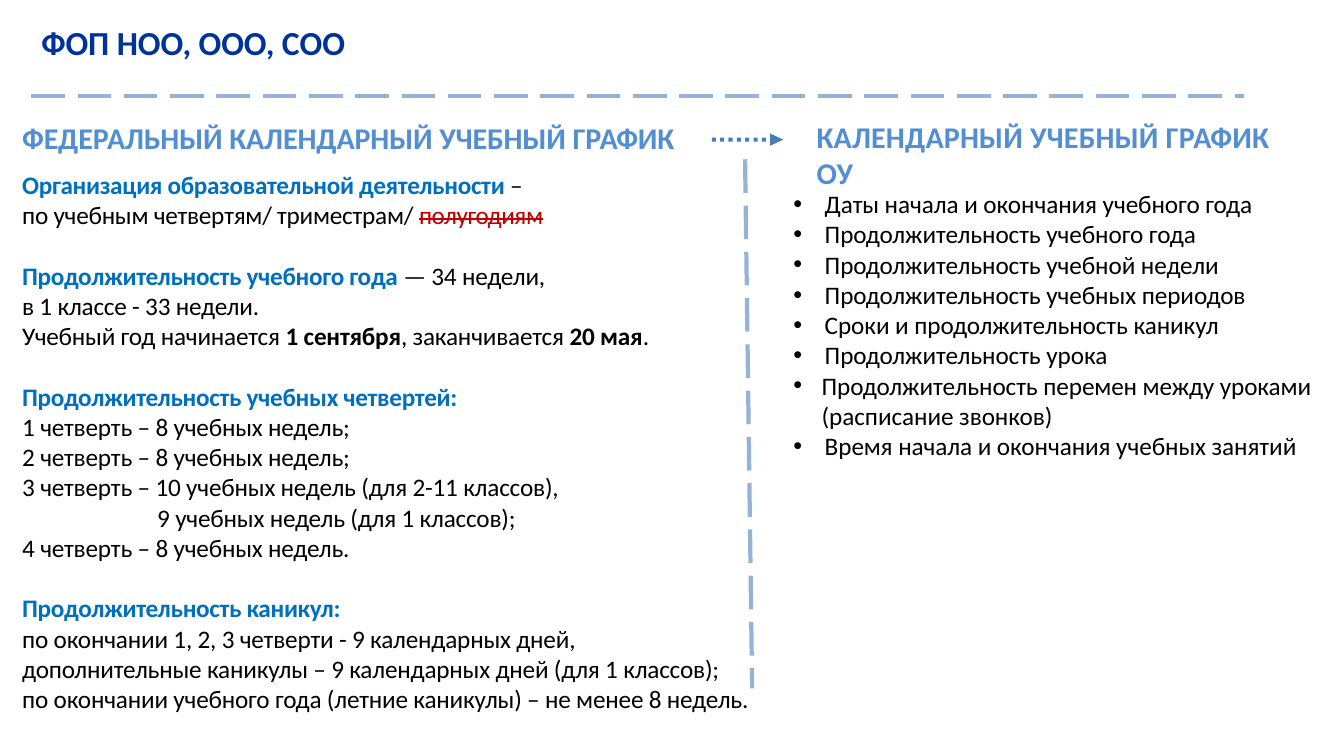
from dataclasses import dataclass

from lxml.etree import SubElement
from pptx import Presentation
from pptx.dml.color import RGBColor
from pptx.enum.dml import MSO_LINE
from pptx.enum.shapes import MSO_CONNECTOR
from pptx.enum.text import MSO_ANCHOR, MSO_AUTO_SIZE, PP_ALIGN
from pptx.oxml.ns import qn
from pptx.util import Inches, Pt

NAVY = RGBColor(0x00, 0x33, 0x99)
HEADING_BLUE = RGBColor(0x53, 0x8E, 0xD3)
TOPIC_BLUE = RGBColor(0x00, 0x6F, 0xC0)
RULE_BLUE = RGBColor(0x94, 0xB3, 0xD6)
ARROW_BLUE = RGBColor(0x49, 0x7D, 0xBA)
RED = RGBColor(0xC0, 0x00, 0x00)
BLACK = RGBColor(0x00, 0x00, 0x00)
FONT = "Calibri"


@dataclass(frozen=True)
class Span:
    text: str
    color: RGBColor = BLACK
    bold: bool = False
    strike: bool = False
    tighten: float = 0


@dataclass(frozen=True)
class Para:
    spans: tuple[Span, ...]
    margin: float = 0.02
    indent: float = 0
    bullet: str = ""
    number: int = 0


@dataclass(frozen=True)
class Block:
    left: float
    top: float
    width: float
    height: float
    paras: tuple[Para, ...]
    size: float = 18
    spacing: float = -0.13


def plain(text: str) -> Para:
    return Para((Span(text),))


def topic(text: str, rest: str = "") -> Para:
    spans = (Span(text, TOPIC_BLUE, True, tighten=0.1),)
    return Para(spans + (Span(rest),) if rest else spans)


def heading(text: str, color: RGBColor = HEADING_BLUE) -> tuple[Para, ...]:
    return (Para((Span(text, color, True),), 0.01),)


def quarter(number: int, text: str) -> Para:
    return Para((Span(text),), 0.2, -0.18, number=number)


def bullet(text: str, margin: float = 0.32, indent: float = -0.31) -> Para:
    return Para((Span(text),), margin, indent, bullet="•")


TITLE = Block(0.4, 0.19, 3.2, 0.43, heading("ФОП НОО, ООО, СОО", NAVY), 24, -0.07)

BLOCKS = (
    Block(0.21, 1.15, 6.55, 0.39,
          heading("ФЕДЕРАЛЬНЫЙ КАЛЕНДАРНЫЙ УЧЕБНЫЙ ГРАФИК"), 21.5, -0.09),
    Block(8.09, 1.14, 4.8, 0.39,
          heading("КАЛЕНДАРНЫЙ УЧЕБНЫЙ ГРАФИК ОУ"), 21.5, 0.13),
    Block(7.86, 1.84, 5.24, 2.73, (
        bullet("Даты начала и окончания учебного года"),
        bullet("Продолжительность учебного года"),
        bullet("Продолжительность учебной недели"),
        bullet("Продолжительность учебных периодов"),
        bullet("Сроки и продолжительность каникул"),
        bullet("Продолжительность урока"),
        bullet("Продолжительность перемен между уроками (расписание звонков)",
               0.29, -0.28),
        bullet("Время начала и окончания учебных занятий"),
    ), spacing=-0.07),
    Block(0.2, 1.65, 5.4, 0.63, (
        topic("Организация образовательной деятельности ", "–"),
        Para((Span("по учебным четвертям/ триместрам/ ", tighten=0.05),
              Span("полугодиям", RED, strike=True, tighten=0.17))),
    )),
    Block(0.2, 2.55, 6.4, 0.93, (
        topic("Продолжительность учебного года ", "— 34 недели,"),
        plain("в 1 классе - 33 недели."),
        Para((Span("Учебный год начинается "), Span("1 сентября", bold=True),
              Span(", заканчивается "), Span("20 мая", bold=True), Span("."))),
    )),
    Block(0.2, 3.75, 5.5, 1.83, (
        topic("Продолжительность учебных четвертей:"),
        quarter(1, "четверть – 8 учебных недель;"),
        quarter(2, "четверть – 8 учебных недель;"),
        quarter(3, "четверть – 10 учебных недель (для 2-11 классов),"),
        Para((Span("9 учебных недель (для 1 классов);"),), 1.36),
        quarter(4, "четверть – 8 учебных недель."),
    )),
    Block(0.2, 5.85, 7.28, 1.23, (
        topic("Продолжительность каникул:"),
        plain("по окончании 1, 2, 3 четверти - 9 календарных дней,"),
        plain("дополнительные каникулы – 9 календарных дней (для 1 классов);"),
        plain("по окончании учебного года (летние каникулы) – не менее 8 недель."),
    )),
)


def format_para(p, para: Para) -> None:
    """Set alignment, indents and the bullet or number."""
    p.alignment = PP_ALIGN.LEFT
    p.space_before = Pt(0)
    pPr = p._p.get_or_add_pPr()
    pPr.set("marL", str(Inches(para.margin)))
    pPr.set("indent", str(Inches(para.indent)))
    if para.bullet:
        SubElement(pPr, qn("a:buFont"), typeface="Arial")
        SubElement(pPr, qn("a:buChar"), char=para.bullet)
    elif para.number:
        SubElement(pPr, qn("a:buAutoNum"), type="arabicPlain",
                   startAt=str(para.number))


def fill_block(shape, block: Block) -> None:
    shape.left, shape.top = Inches(block.left), Inches(block.top)
    shape.width, shape.height = Inches(block.width), Inches(block.height)
    tf = shape.text_frame
    tf.word_wrap = True
    tf.auto_size = MSO_AUTO_SIZE.NONE
    tf.vertical_anchor = MSO_ANCHOR.TOP
    tf.margin_left = tf.margin_right = tf.margin_bottom = 0
    tf.margin_top = Inches(0.03)
    for i, para in enumerate(block.paras):
        p = tf.add_paragraph() if i else tf.paragraphs[0]
        format_para(p, para)
        for span in para.spans:
            r = p.add_run()
            r.text = span.text
            r.font.name = FONT
            r.font.size = Pt(block.size)
            r.font.bold = span.bold
            r.font.color.rgb = span.color
            rPr = r._r.get_or_add_rPr()
            rPr.set("spc", str(round((block.spacing - span.tighten) * 100)))
            if span.strike:
                rPr.set("strike", "sngStrike")


def add_dashed_line(s, x1: float, y1: float, x2: float, y2: float) -> None:
    line = s.shapes.add_connector(MSO_CONNECTOR.STRAIGHT, Inches(x1), Inches(y1),
                                  Inches(x2), Inches(y2))
    line.line.color.rgb = RULE_BLUE
    line.line.width = Pt(3)
    line.line.dash_style = MSO_LINE.LONG_DASH
    SubElement(line._element.spPr, qn("a:effectLst"))


def add_dotted_arrow(s, left: float, middle: float) -> None:
    """Draw seven square dots and a triangular head as one outline."""
    dot, dots, head = 0.04, 7, left + 0.58
    top, bottom = middle - dot / 2, middle + dot / 2
    outlines = [[(head, middle - 0.06), (head + 0.13, middle),
                 (head, middle + 0.06)]]
    for i in range(dots):
        x = left + i * (head - left) / dots
        outlines.append([(x, top), (x + dot, top), (x + dot, bottom), (x, bottom)])
    contours = [[(Inches(x), Inches(y)) for x, y in points] for points in outlines]
    first, *rest = contours
    builder = s.shapes.build_freeform(*first[0])
    builder.add_line_segments(first[1:], close=True)
    for start, *others in rest:
        builder.move_to(*start)
        builder.add_line_segments(others, close=True)
    arrow = builder.convert_to_shape()
    arrow.shadow.inherit = False
    arrow.fill.solid()
    arrow.fill.fore_color.rgb = ARROW_BLUE
    arrow.line.fill.background()


def main() -> None:
    prs = Presentation()
    prs.slide_width, prs.slide_height = Inches(13.33), Inches(7.5)
    s = prs.slides.add_slide(prs.slide_layouts[5])
    fill_block(s.shapes.title, TITLE)
    add_dotted_arrow(s, 7.06, 1.385)
    add_dashed_line(s, 0.31, 0.95, 12.34, 0.95)
    add_dashed_line(s, 7.39, 1.58, 7.46, 6.83)
    for block in BLOCKS:
        fill_block(s.shapes.add_textbox(0, 0, 0, 0), block)
    prs.save("out.pptx")


if __name__ == "__main__":
    main()
